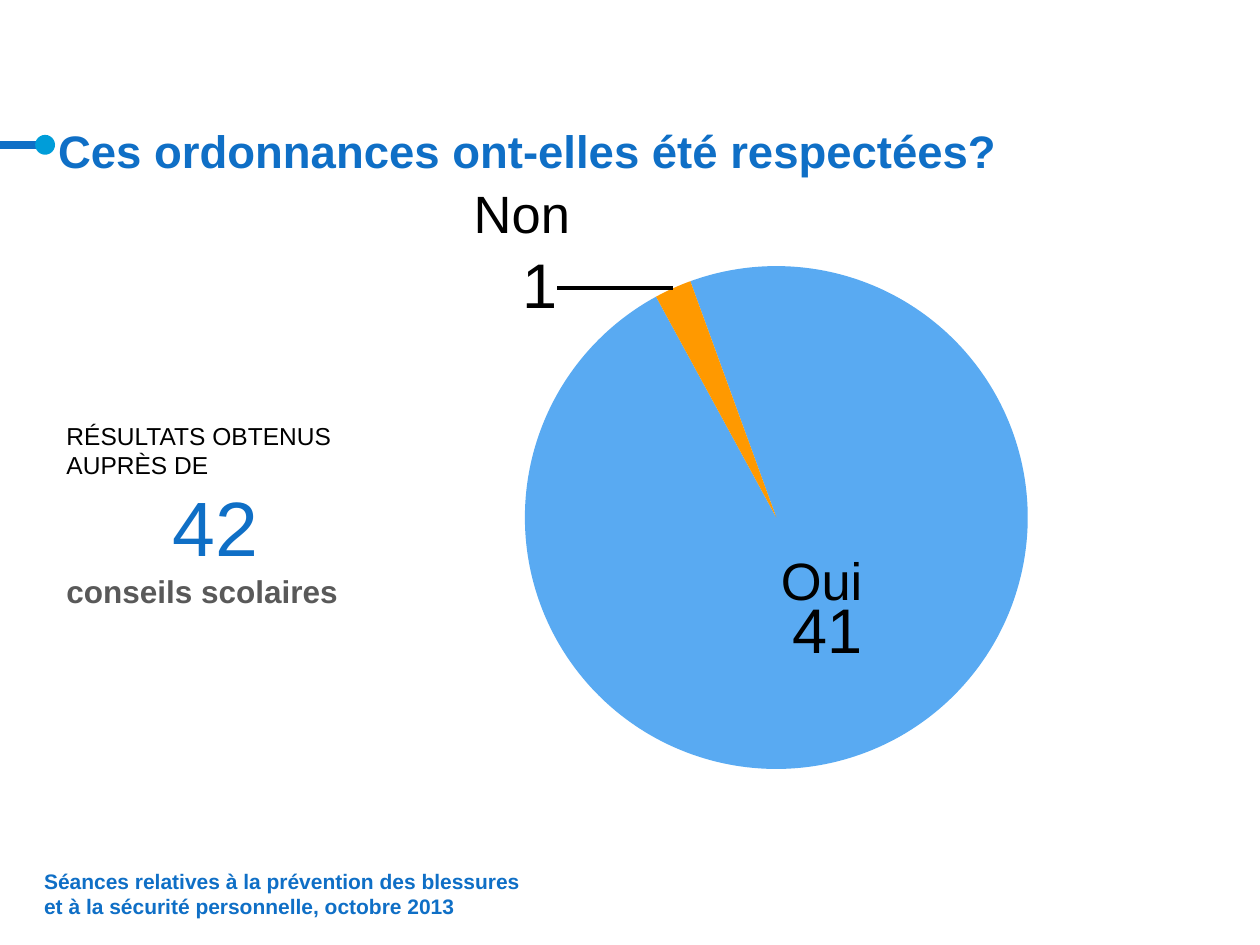
import pptx
import pptx.util
import pptx.chart.data
import pptx.dml.color
import pptx.enum.chart
import pptx.enum.shapes
import pptx.enum.text
import pptx.oxml
import pptx.oxml.ns

Cm, Pt = pptx.util.Cm, pptx.util.Pt
RGB = pptx.dml.color.RGBColor
ALIGN = pptx.enum.text.PP_ALIGN
ANCHOR = pptx.enum.text.MSO_ANCHOR
POS = pptx.enum.chart.XL_LABEL_POSITION
FONT = "Arial"

BLUE = RGB(0x0F, 0x6F, 0xC6)
CYAN = RGB(0x00, 0x9D, 0xD9)
SKY = RGB(0x59, 0xAA, 0xF2)
ORANGE = RGB(0xFF, 0x99, 0x00)
GREY = RGB(0x59, 0x59, 0x59)
BLACK = RGB(0, 0, 0)

# Content: a run is (text, size, colour, bold); boxes are in cm
TITLE = ("Ces ordonnances ont-elles été respectées?", 26, BLUE, True)
NOTES = [
    ((15.49, 10.92, 2.59, 1.55), [(ALIGN.LEFT, [("Oui", 30, BLACK, False)])]),
    ((9.3, 3.53, 2.79, 1.55), [(ALIGN.LEFT, [("Non", 30, BLACK, False)])]),
    ((1.09, 8.36, 6.81, 4.11), [
        (ALIGN.LEFT, [("RÉSULTATS OBTENUS AUPRÈS DE", 14, BLACK, False)]),
        (ALIGN.CENTER, [("42", 44, BLUE, False), (" ", 30, BLACK, False)]),
        (ALIGN.LEFT, [("conseils scolaires", 18, GREY, True)]),
    ]),
]
FOOT = ("Séances relatives à la prévention des blessures et à la sécurité "
        "personnelle, octobre\u00a02013", 12, BLUE, True)
# Slices: category, value, colour, label position, label shift
SLICES = [
    ("1", 41, SKY, POS.CENTER, None),
    ("2", 1, ORANGE, POS.OUTSIDE_END, (-0.13, 0.06)),
]
PLOT = {"x": 0.21, "y": 0.12, "w": 0.58, "h": 0.76}
START = 340


def style(font, size, color, bold=False):
    font.name, font.size, font.bold = FONT, Pt(size), bold
    font.color.rgb = color


def write(para, item):
    text, *look = item
    run = para.add_run()
    run.text = text
    style(run.font, *look)


def place(shape, box):
    shape.left, shape.top, shape.width, shape.height = map(Cm, box)


def inset(frame, top=0):
    frame.margin_left = frame.margin_right = frame.margin_bottom = 0
    frame.margin_top = Cm(top)
    frame.vertical_anchor = ANCHOR.BOTTOM
    frame.word_wrap = True


def node(xml):
    return pptx.oxml.parse_xml(xml)


def layout(vals, inner=False):
    part = '<c:layoutTarget val="inner"/>' if inner else ""
    if inner:
        part += '<c:xMode val="edge"/><c:yMode val="edge"/>'
    part += "".join(f'<c:{key} val="{val}"/>' for key, val in vals.items())
    space = pptx.oxml.ns.nsdecls("c")
    return node(f"<c:layout {space}><c:manualLayout>{part}"
                "</c:manualLayout></c:layout>")


deck = pptx.Presentation()
deck.slide_width, deck.slide_height = Cm(25.4), Cm(19.05)
slide = deck.slides.add_slide(deck.slide_layouts[5])
shapes = slide.shapes

# Rule at the left edge
rule = shapes.add_connector(pptx.enum.shapes.MSO_CONNECTOR.STRAIGHT,
                            Cm(0), Cm(2.92), Cm(0.89), Cm(2.92))
rule.line.color.rgb, rule.line.width = BLUE, Pt(4.75)
rule._element.spPr.append(
    node(f'<a:effectLst {pptx.oxml.ns.nsdecls("a")}/>'))

# Pie chart
data = pptx.chart.data.CategoryChartData()
data.categories = [item[0] for item in SLICES]
data.add_series("Series 1", [item[1] for item in SLICES])
chart = shapes.add_chart(pptx.enum.chart.XL_CHART_TYPE.PIE, Cm(6.91), Cm(3.73),
                         Cm(17.48), Cm(13.41), data).chart
chart.has_legend = chart.has_title = False
style(chart.font, 18, BLACK)
plot = chart.plots[0]
plot.vary_by_categories = False
pie = plot._element
for old in pie.findall(pptx.oxml.ns.qn("c:firstSliceAng")):
    pie.remove(old)
pie.append(node(
    f'<c:firstSliceAng {pptx.oxml.ns.nsdecls("c")} val="{START}"/>'))
area = pie.getparent()
for old in area.findall(pptx.oxml.ns.qn("c:layout")):
    area.remove(old)
area.insert(0, layout(PLOT, True))

# Slice colours and labels
row = plot.series[0]
row.data_labels.show_value = True
style(row.data_labels.font, 36, BLACK)
for num, (_, _, color, pos, shift) in enumerate(SLICES):
    point = row.points[num]
    point.format.fill.solid()
    point.format.fill.fore_color.rgb = color
    label = point.data_label
    style(label.font, 36, BLACK)
    label.position = pos
    if shift:
        tag = row.data_labels._element.findall(pptx.oxml.ns.qn("c:dLbl"))[-1]
        tag.insert(1, layout(dict(zip("xy", shift))))

# Leader line to the small slice
marks = row.data_labels._element
for old in marks.findall(pptx.oxml.ns.qn("c:showLeaderLines")):
    marks.remove(old)
space = pptx.oxml.ns.nsdecls("c", "a")
marks.append(node(f'<c:showLeaderLines {space} val="1"/>'))
marks.append(node(
    f'<c:leaderLines {space}><c:spPr><a:ln w="{Pt(2.25)}"><a:solidFill>'
    f'<a:srgbClr val="{BLACK}"/></a:solidFill></a:ln></c:spPr>'
    "</c:leaderLines>"))

# Title
title = shapes.title
place(title, (1.17, 2.29, 23.19, 1.3))
inset(title.text_frame, 0.13)
title.text_frame.auto_size = pptx.enum.text.MSO_AUTO_SIZE.NONE
para = title.text_frame.paragraphs[0]
para.alignment, para.line_spacing = ALIGN.LEFT, Pt(28)
write(para, TITLE)

# Text boxes
for box, paras in NOTES:
    frame = shapes.add_textbox(*map(Cm, box)).text_frame
    frame.word_wrap = True
    frame.auto_size = pptx.enum.text.MSO_AUTO_SIZE.SHAPE_TO_FIT_TEXT
    for num, (align, runs) in enumerate(paras):
        para = frame.add_paragraph() if num else frame.paragraphs[0]
        para.alignment = align
        for item in runs:
            write(para, item)

# Footer
frame = shapes.add_textbox(Cm(0.89), Cm(17.86), Cm(10.03), Cm(0.66)).text_frame
inset(frame)
write(frame.paragraphs[0], FOOT)

# Dot at the end of the rule
dot = shapes.add_shape(pptx.enum.shapes.MSO_SHAPE.OVAL,
                       Cm(0.71), Cm(2.72), Cm(0.4), Cm(0.4))
dot.shadow.inherit = False
dot.fill.solid()
dot.fill.fore_color.rgb = CYAN
dot.line.fill.background()

deck.save("out.pptx")
